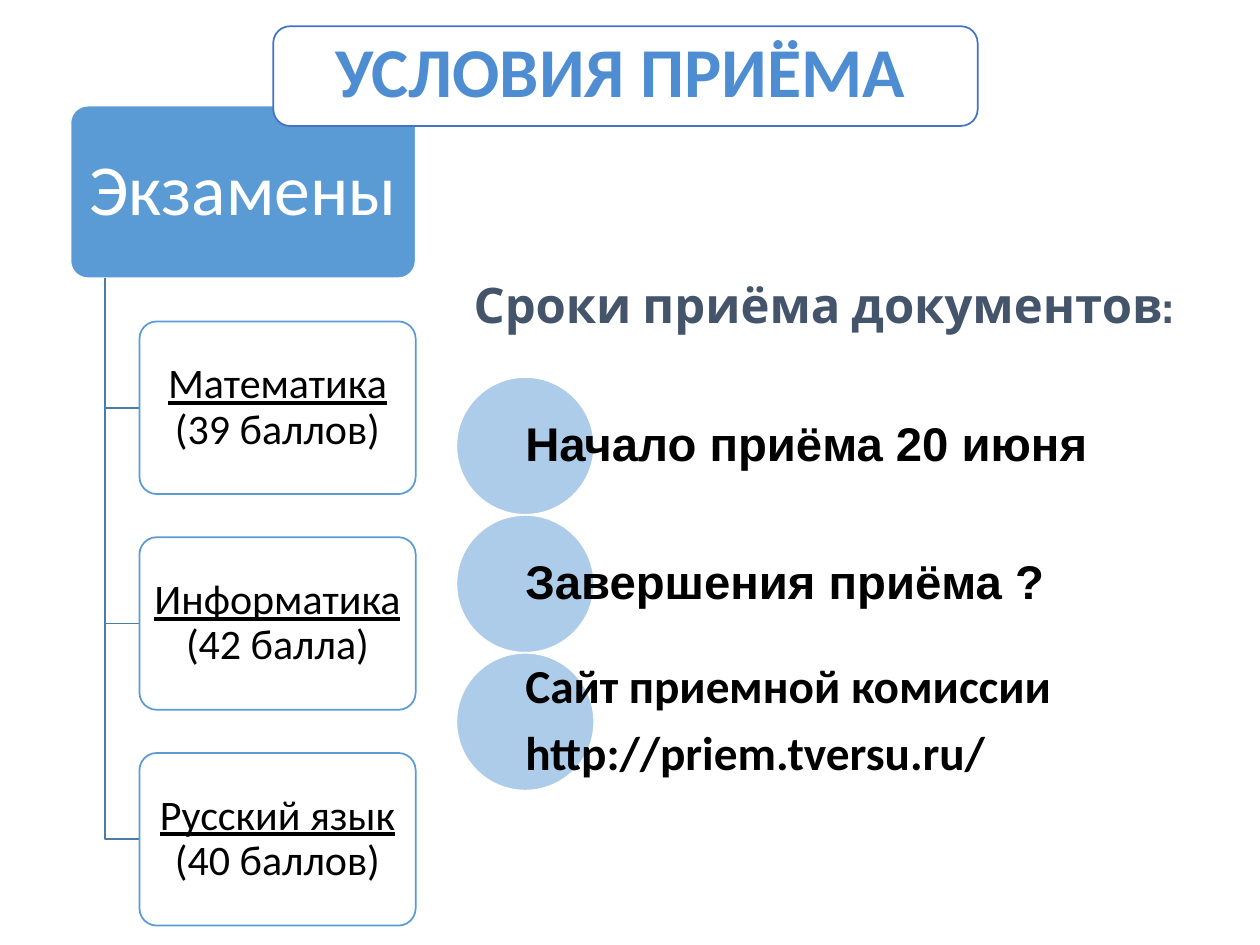
from dataclasses import dataclass

from lxml import etree
from pptx import Presentation
from pptx.dml.color import RGBColor
from pptx.enum.shapes import MSO_SHAPE
from pptx.enum.text import MSO_ANCHOR, MSO_AUTO_SIZE, PP_ALIGN
from pptx.oxml.ns import qn
from pptx.util import Cm, Pt

ROUNDED, OVAL = MSO_SHAPE.ROUNDED_RECTANGLE, MSO_SHAPE.OVAL
LEFT, CENTER = PP_ALIGN.LEFT, PP_ALIGN.CENTER
MIDDLE, NO_AUTOFIT = MSO_ANCHOR.MIDDLE, MSO_AUTO_SIZE.NONE
TITLE_ONLY = 5


@dataclass(frozen=True)
class Theme:
    blue: str = "5B9BD5"
    frame: str = "4472C4"
    branch: str = "497CAB"
    title: str = "4E8DD1"
    heading: str = "44546A"
    black: str = "000000"
    white: str = "FFFFFF"
    body_font: str = "Calibri"
    date_font: str = "Arial"
    heading_font: str = "Cabin"
    exams_size: int = 41
    title_size: int = 40
    heading_size: int = 28
    date_size: int = 27
    subject_size: int = 24


THEME = Theme()
EXAMS = [
    ("Математика", "(39 баллов)"),
    ("Информатика", "(42 балла)"),
    ("Русский язык", "(40 баллов)"),
]
DATES = [
    ("Начало приёма 20 июня", THEME.date_font),
    ("Завершения приёма ?", THEME.date_font),
    ("Сайт приемной комиссии\nhttp://priem.tversu.ru/", THEME.body_font),
]


def rgb(color):
    return RGBColor.from_string(color)


def add_panel(slide, kind, box, fill, line, opacity=100):
    panel = slide.shapes.add_shape(kind, *map(Cm, box))
    panel.shadow.inherit = False
    panel.fill.solid()
    panel.fill.fore_color.rgb = rgb(fill)
    if opacity < 100:
        color = panel.element.spPr.find(qn("a:solidFill"))[0]
        etree.SubElement(color, qn("a:alpha"), val=str(opacity * 1000))
    panel.line.color.rgb = rgb(line)
    panel.line.width = Pt(1)
    return panel


def set_frame(frame, side, edge):
    """Wrap and centre the text vertically, with the given insets in cm."""
    frame.word_wrap = True
    frame.auto_size = NO_AUTOFIT
    frame.vertical_anchor = MIDDLE
    frame.margin_left = frame.margin_right = Cm(side)
    frame.margin_top = frame.margin_bottom = Cm(edge)


def style(paragraph, size, color, font=THEME.body_font, bold=False,
          align=LEFT, spacing=0.9, after=0.35):
    """Format a paragraph and its runs; after is a share of the type size."""
    paragraph.alignment = align
    paragraph.line_spacing = spacing
    paragraph.space_after = Pt(size * after)
    for run in paragraph.runs:
        run.font.name = font
        run.font.size = Pt(size)
        run.font.bold = bold
        run.font.color.rgb = rgb(color)


def add_branch(slide, x, top, right, bottom):
    outline = slide.shapes.build_freeform(Cm(x), Cm(top))
    outline.add_line_segments(
        [(Cm(x), Cm(bottom)), (Cm(right), Cm(bottom))], close=False)
    branch = outline.convert_to_shape()
    branch.shadow.inherit = False
    branch.fill.background()
    branch.line.color.rgb = rgb(THEME.branch)
    branch.line.width = Pt(1)


def add_exam_tree(slide, left, top, width, height):
    """Place the heading block and a column of subjects branching from it."""
    block_height = height / (1 + 1.25 * len(EXAMS))
    root = add_panel(slide, ROUNDED, (left, top, width, block_height),
                     THEME.blue, THEME.white)
    root.adjustments[0] = 0.1
    set_frame(root.text_frame, 0.15, 0.15)
    root.text_frame.text = "Экзамены"
    style(root.text_frame.paragraphs[0], THEME.exams_size, THEME.white,
          align=CENTER)

    subject_left = left + 0.2 * width
    for row, (subject, score) in enumerate(EXAMS, start=1):
        subject_top = top + row * 1.25 * block_height
        add_branch(slide, left + 0.1 * width, top + block_height,
                   subject_left, subject_top + block_height / 2)
        card = add_panel(
            slide, ROUNDED,
            (subject_left, subject_top, 0.8 * width, block_height),
            THEME.white, THEME.blue, opacity=90)
        card.adjustments[0] = 0.1
        set_frame(card.text_frame, 0.08, 0.08)
        paragraph = card.text_frame.paragraphs[0]
        name = paragraph.add_run()
        name.text = subject
        paragraph.add_run().text = f" {score}"
        style(paragraph, THEME.subject_size, THEME.black, align=CENTER)
        name.font.underline = True


def add_title(slide, left, top, width, height):
    """Frame the title; its text runs from inside the frame to the right."""
    frame = add_panel(slide, ROUNDED, (left, top, width, height),
                      THEME.white, THEME.frame)
    title = slide.shapes.title
    title.left, title.top = Cm(left + 1), Cm(top - 0.4)
    title.width, title.height = Cm(21.89), Cm(2.77)
    set_frame(title.text_frame, 0.25, 0.13)
    title.text_frame.text = "УСЛОВИЯ ПРИЁМА"
    style(title.text_frame.paragraphs[0], THEME.title_size, THEME.title,
          bold=True, after=0)
    frame.element.addnext(title.element)


def add_dates(slide, left, top, width, height):
    """Stack circles, each with its text starting at the circle's centre."""
    diameter = height / len(DATES)
    for row, (text, font) in enumerate(DATES):
        row_top = top + row * diameter
        add_panel(slide, OVAL, (left, row_top, diameter, diameter),
                  THEME.blue, THEME.white, opacity=50)
        label = slide.shapes.add_textbox(
            Cm(left + diameter / 2), Cm(row_top),
            Cm(width - diameter / 2), Cm(diameter))
        set_frame(label.text_frame, 0, 0.1)
        label.text_frame.text = text
        for paragraph in label.text_frame.paragraphs:
            style(paragraph, THEME.date_size, THEME.black, font, bold=True)


def add_dates_heading(slide, left, top, width, height):
    heading = slide.shapes.add_textbox(*map(Cm, (left, top, width, height)))
    set_frame(heading.text_frame, 0.25, 0.13)
    heading.text_frame.text = "Сроки приёма документов:"
    style(heading.text_frame.paragraphs[0], THEME.heading_size, THEME.heading,
          THEME.heading_font, bold=True, spacing=1.0, after=0)


def main():
    deck = Presentation()
    deck.slide_width, deck.slide_height = Cm(25.4), Cm(19.05)
    slide = deck.slides.add_slide(deck.slide_layouts[TITLE_ONLY])
    add_exam_tree(slide, 1.42, 2.13, 6.96, 16.53)
    add_title(slide, 5.51, 0.53, 14.2, 2.01)
    add_dates(slide, 9.2, 7.6, 16.2, 8.34)
    add_dates_heading(slide, 9.3, 5.41, 16.61, 1.45)
    deck.save("out.pptx")


if __name__ == "__main__":
    main()
